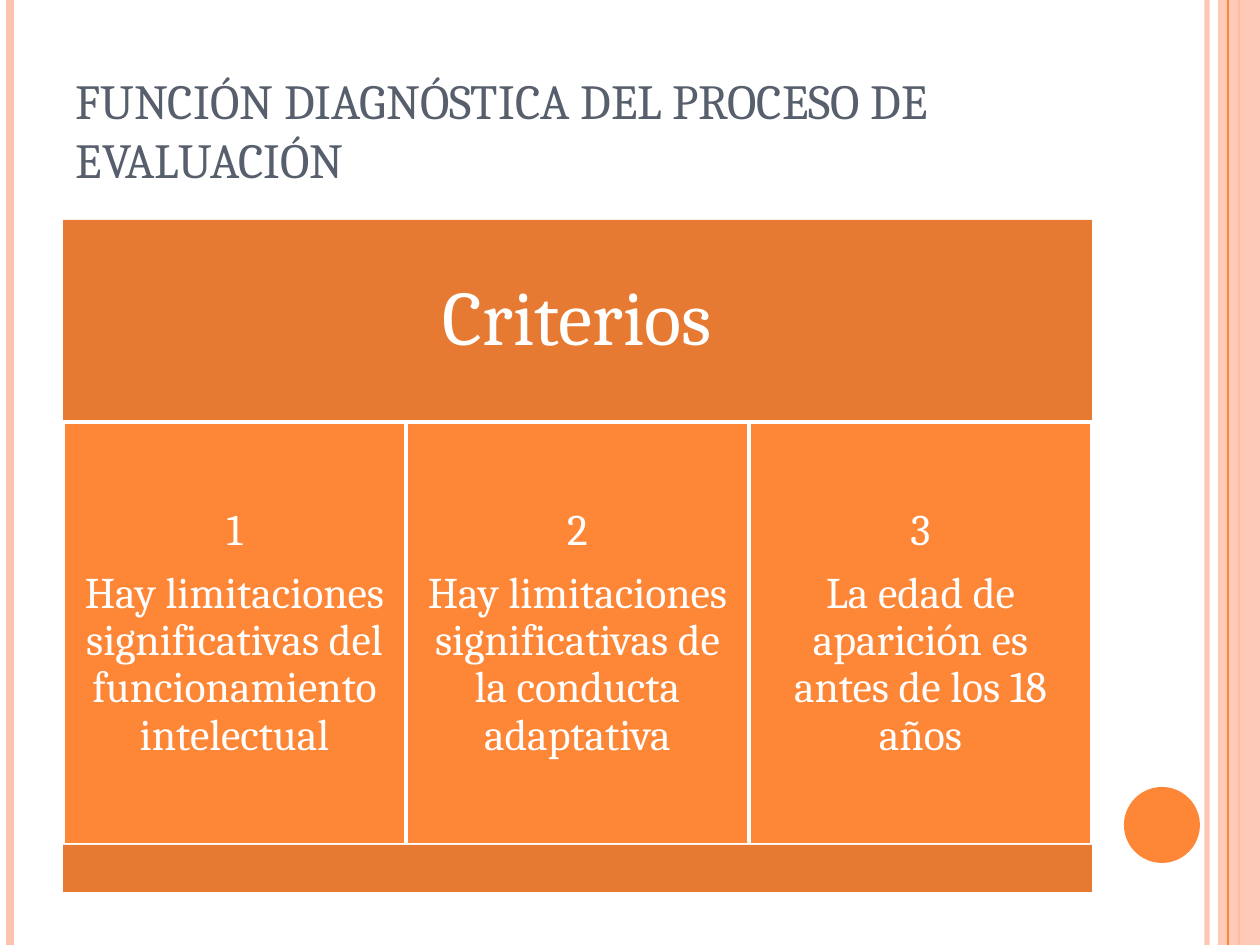
import lxml.etree
import pptx
import pptx.dml.color
import pptx.enum.shapes
import pptx.enum.text
import pptx.oxml.ns
import pptx.util

RGB = pptx.dml.color.RGBColor
SHAPE = pptx.enum.shapes.MSO_SHAPE
ALIGN = pptx.enum.text.PP_ALIGN
ANCHOR = pptx.enum.text.MSO_ANCHOR
qn = pptx.oxml.ns.qn

PEACH = RGB(0xFE, 0xC3, 0xAE)
ORANGE = RGB(0xFE, 0x86, 0x37)
DARK_ORANGE = RGB(0xE7, 0x7A, 0x32)
SLATE = RGB(0x57, 0x5F, 0x6D)
WHITE = RGB(0xFF, 0xFF, 0xFF)

EMU_PER_PX = 914400 / 126
SLIDE_WIDTH, SLIDE_HEIGHT = 1260, 945


def px(length):
    return pptx.util.Emu(round(length * EMU_PER_PX))


class SlideBuilder:
    """Holds the slide style and adds each kind of element to the slide."""

    font_name = "Cambria"

    def __init__(self, deck):
        self.slide = deck.slides.add_slide(deck.slide_layouts[5])

    def set_opacity(self, properties, percent):
        color = properties.find(".//" + qn("a:srgbClr"))
        lxml.etree.SubElement(color, qn("a:alpha"), val=str(percent * 1000))

    def add_run(self, paragraph, text, size, color):
        run = paragraph.add_run()
        run.text = text
        run.font.name = self.font_name
        run.font.size = pptx.util.Pt(size)
        run.font.color.rgb = color

    def title(self, text, left, top, width, height):
        heading = self.slide.shapes.title
        heading.left, heading.top = px(left), px(top)
        heading.width, heading.height = px(width), px(height)
        frame = heading.text_frame
        frame.word_wrap = True
        frame.auto_size = pptx.enum.text.MSO_AUTO_SIZE.NONE
        frame.vertical_anchor = ANCHOR.BOTTOM
        frame.paragraphs[0].alignment = ALIGN.LEFT
        self.add_run(frame.paragraphs[0], text, 28, SLATE)

    def stripe(self, x, color, weight, opacity=100):
        line = self.slide.shapes.add_connector(
            pptx.enum.shapes.MSO_CONNECTOR.STRAIGHT, px(x), 0, px(x), px(SLIDE_HEIGHT)
        )
        line.line.color.rgb = color
        line.line.width = pptx.util.Pt(weight)
        properties = line._element.spPr
        if opacity < 100:
            self.set_opacity(properties, opacity)
        lxml.etree.SubElement(properties, qn("a:effectLst"))

    def shape(self, preset, left, top, width, height, fill, outline=None, opacity=100):
        shape = self.slide.shapes.add_shape(
            preset, px(left), px(top), px(width), px(height)
        )
        shape.shadow.inherit = False
        shape.fill.solid()
        shape.fill.fore_color.rgb = fill
        if opacity < 100:
            self.set_opacity(shape._element.spPr, opacity)
        if outline is None:
            shape.line.fill.background()
        else:
            shape.line.color.rgb = outline
            shape.line.width = pptx.util.Pt(2)
        return shape

    def label(self, shape, lines, size, inset):
        frame = shape.text_frame
        frame.word_wrap = True
        frame.vertical_anchor = ANCHOR.MIDDLE
        frame.margin_left = frame.margin_right = px(inset)
        frame.margin_top = frame.margin_bottom = px(inset)
        for index, line in enumerate(lines):
            paragraph = frame.add_paragraph() if index else frame.paragraphs[0]
            paragraph.alignment = ALIGN.CENTER
            paragraph.line_spacing = 0.9
            paragraph.space_after = pptx.util.Pt(round(size * 0.35))
            self.add_run(paragraph, line, size, WHITE)


def main():
    deck = pptx.Presentation()
    deck.slide_width, deck.slide_height = px(SLIDE_WIDTH), px(SLIDE_HEIGHT)
    builder = SlideBuilder(deck)

    builder.stripe(1207, PEACH, 3, opacity=93)
    builder.stripe(10, PEACH, 4.5)
    builder.stripe(1239, ORANGE, 1.5)
    builder.shape(SHAPE.RECTANGLE, 1218, 0, 42, SLIDE_HEIGHT, PEACH, opacity=87)
    builder.stripe(1228, ORANGE, 0.75)
    builder.shape(SHAPE.OVAL, 1124, 787, 76, 76, ORANGE)

    left, width = 63, 1029
    builder.title("FUNCIÓN DIAGNÓSTICA DEL PROCESO DE EVALUACIÓN", left, 38, width, 157)

    header_top, header_height, criteria_height, base_height = 220, 202, 423, 47
    criteria_top = header_top + header_height
    header = builder.shape(
        SHAPE.RECTANGLE, left, header_top, width, header_height, DARK_ORANGE
    )
    builder.label(header, ["Criterios"], 44, 23)

    criteria = [
        "Hay limitaciones significativas del funcionamiento intelectual",
        "Hay limitaciones significativas de la conducta adaptativa",
        "La edad de aparición es antes de los 18 años",
    ]
    column_width = width // len(criteria)
    for index, criterion in enumerate(criteria):
        column = builder.shape(
            SHAPE.RECTANGLE, left + index * column_width, criteria_top,
            column_width, criteria_height, ORANGE, outline=WHITE,
        )
        builder.label(column, [str(index + 1), criterion], 25, 13)

    builder.shape(
        SHAPE.RECTANGLE, left, criteria_top + criteria_height, width, base_height, DARK_ORANGE
    )
    deck.save("out.pptx")


if __name__ == "__main__":
    main()
